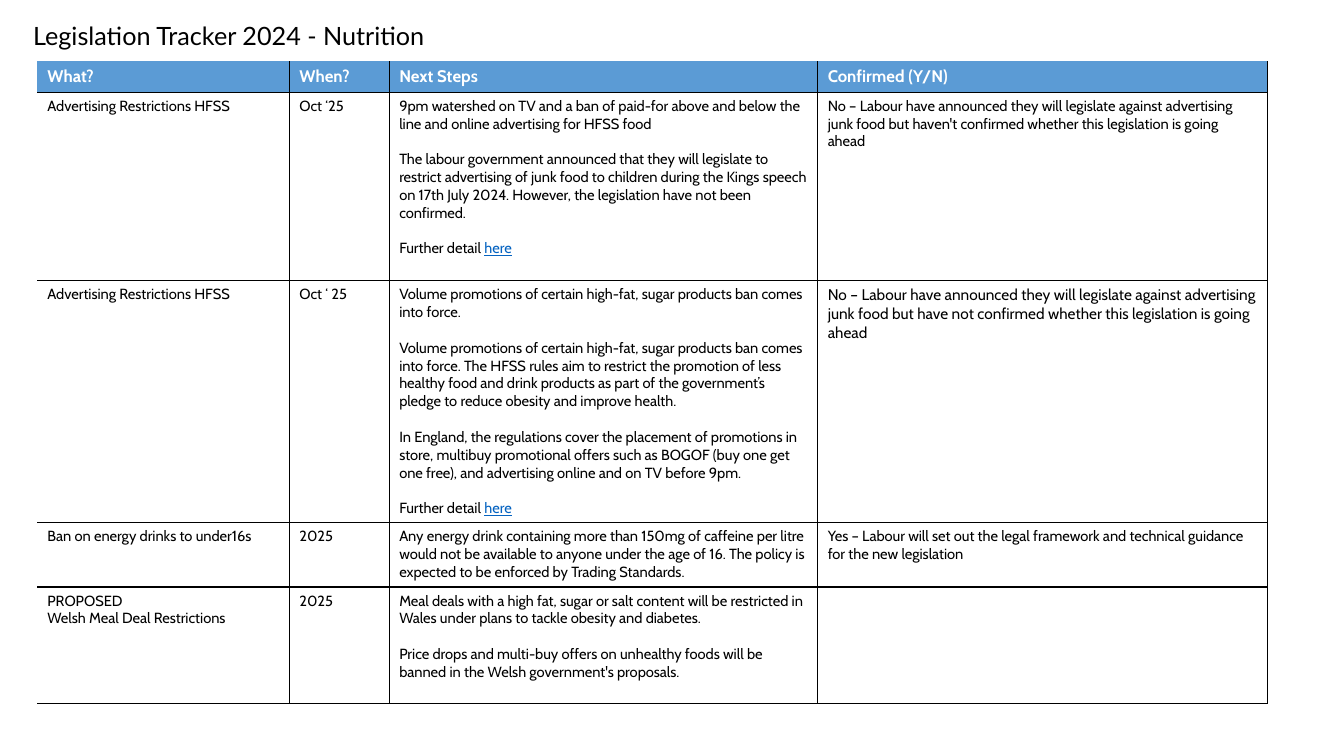
"""Build the nutrition legislation tracker slide."""
from lxml.etree import SubElement
from pptx import Presentation
from pptx.dml.color import RGBColor
from pptx.enum.text import MSO_AUTO_SIZE
from pptx.oxml.ns import qn
from pptx.util import Inches, Pt

COLS = [2.5, 0.99, 4.25, 4.46]
ROWS = [0.3, 1.87, 2.39, 0.64, 1.16]
HEADER = ["What?", "When?", "Next Steps", "Confirmed (Y/N)"]
LINK = "Further detail |here"
BODY = [
    [["Advertising Restrictions HFSS"], ["Oct ‘25"],
     ["9pm watershed on TV and a ban of paid-for above and below the line and online "
      "advertising for HFSS food",
      "The labour government announced that they will legislate to restrict advertising of "
      "junk food to children during the Kings speech on 17th July 2024. However, the "
      "legislation have not been confirmed.",
      LINK],
     ["No – Labour have announced they will legislate against advertising junk food but "
      "haven't confirmed whether this legislation is going ahead"]],
    [["Advertising Restrictions HFSS"], ["Oct ‘ 25"],
     ["Volume promotions of certain high-fat, sugar products ban comes into force.",
      "Volume promotions of certain high-fat, sugar products ban comes into force. The HFSS "
      "rules aim to restrict the promotion of less healthy food and drink products as part "
      "of the government’s pledge to reduce obesity and improve health.",
      "In England, the regulations cover the placement of promotions in store, multibuy "
      "promotional offers such as BOGOF (buy one get one free), and advertising online and "
      "on TV before 9pm.",
      LINK],
     ["No – Labour have announced they will legislate against advertising junk food but "
      "have not confirmed whether this legislation is going ahead"]],
    [["Ban on energy drinks to under16s"], ["2025"],
     ["Any energy drink containing more than 150mg of caffeine per litre would not be "
      "available to anyone under the age of 16. The policy is expected to be enforced by "
      "Trading Standards."],
     ["Yes – Labour will set out the legal framework and technical guidance for the new "
      "legislation"]],
    [["PROPOSED", "Welsh Meal Deal Restrictions"], ["2025"],
     ["Meal deals with a high fat, sugar or salt content will be restricted in Wales under "
      "plans to tackle obesity and diabetes.",
      "Price drops and multi-buy offers on unhealthy foods will be banned in the Welsh "
      "government's proposals."],
     []],
]


def rgb(value):
    return RGBColor.from_string(value)


class Deck:
    """Hold the style and the current slide."""

    black, white, blue, link = "000000", "FFFFFF", "5B9BD5", "0563C1"
    title_font = {"name": "Lato", "size": Pt(18)}
    head_font = {"name": "Cabin", "size": Pt(12), "bold": True}
    body_font = {"name": "Cabin", "size": Pt(10.5), "bold": False}
    large_font = {**body_font, "size": Pt(11)}
    gap = Pt(12.75)

    def __init__(self):
        self.prs = Presentation()
        self.prs.slide_width, self.prs.slide_height = Inches(13.33), Inches(7.5)
        self.s = self.prs.slides.add_slide(self.prs.slide_layouts[6])

    def add_run(self, p, text, font, color):
        r = p.add_run()
        r.text = text
        for name, value in font.items():
            setattr(r.font, name, value)
        r.font.color.rgb = rgb(color)

    def fill_text(self, tf, paragraphs, font, color, gap=0):
        tf.word_wrap = True
        for i, text in enumerate(paragraphs):
            p = tf.add_paragraph() if i else tf.paragraphs[0]
            p.space_before = gap if i else 0
            plain, _, linked = text.partition("|")
            self.add_run(p, plain, font, color)
            if linked:
                self.add_run(p, linked, {**font, "underline": True}, self.link)

    def add_text(self, x, y, w, h, text):
        sp = self.s.shapes.add_textbox(Inches(x), Inches(y), Inches(w), Inches(h))
        self.fill_text(sp.text_frame, [text], self.title_font, self.black)
        sp.text_frame.auto_size = MSO_AUTO_SIZE.SHAPE_TO_FIT_TEXT

    def add_borders(self, cell, sides):
        tc_pr = cell._tc.get_or_add_tcPr()
        for i, side in enumerate("LRTB"):
            ln = SubElement(tc_pr, qn("a:ln" + side), w=str(Pt(1)))
            tc_pr.insert(i, ln)
            if side in sides:
                fill = SubElement(ln, qn("a:solidFill"))
                SubElement(fill, qn("a:srgbClr"), val=self.black)
            else:
                SubElement(ln, qn("a:noFill"))

    def add_table(self, x, y, header, body):
        table = self.s.shapes.add_table(
            len(ROWS), len(COLS), Inches(x), Inches(y),
            Inches(sum(COLS)), Inches(sum(ROWS))).table
        table.first_row = table.horz_banding = False
        for col, width in zip(table.columns, COLS):
            col.width = Inches(width)
        for row, height in zip(table.rows, ROWS):
            row.height = Inches(height)
        for i, row in enumerate([[[name] for name in header], *body]):
            for j, paragraphs in enumerate(row):
                cell = table.cell(i, j)
                if i == 0:
                    cell.fill.solid()
                    cell.fill.fore_color.rgb = rgb(self.blue)
                    font, color = self.head_font, self.white
                else:
                    cell.fill.background()
                    font = self.large_font if (i, j) == (2, 3) else self.body_font
                    color = self.black
                gap = self.gap if j == 2 else 0
                self.fill_text(cell.text_frame, paragraphs, font, color, gap)
                self.add_borders(cell, "RB" + ("T" if i else "") + ("L" if j else ""))


def main():
    deck = Deck()
    deck.add_table(0.37, 0.61, HEADER, BODY)
    deck.add_text(0.23, 0.15, 5.1, 0.4, "Legislation Tracker 2024 - Nutrition")
    deck.prs.save("out.pptx")


if __name__ == "__main__":
    main()
